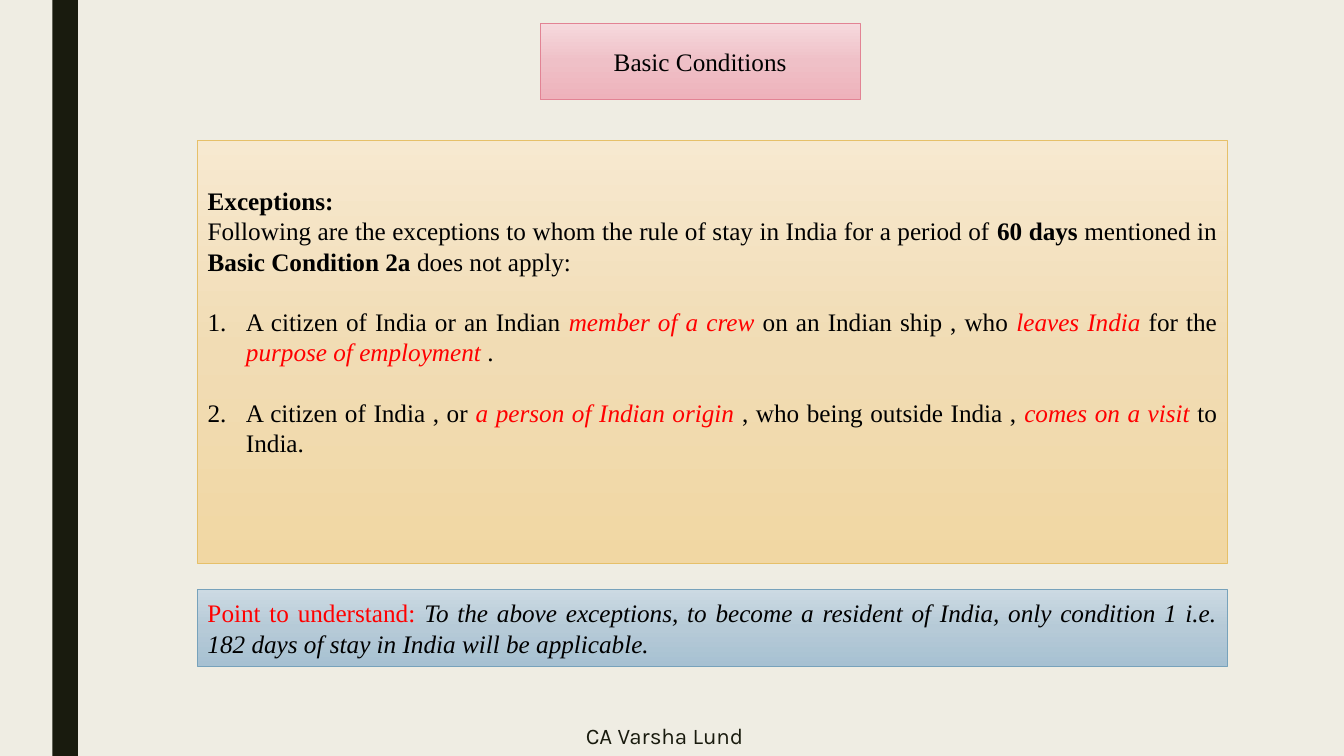
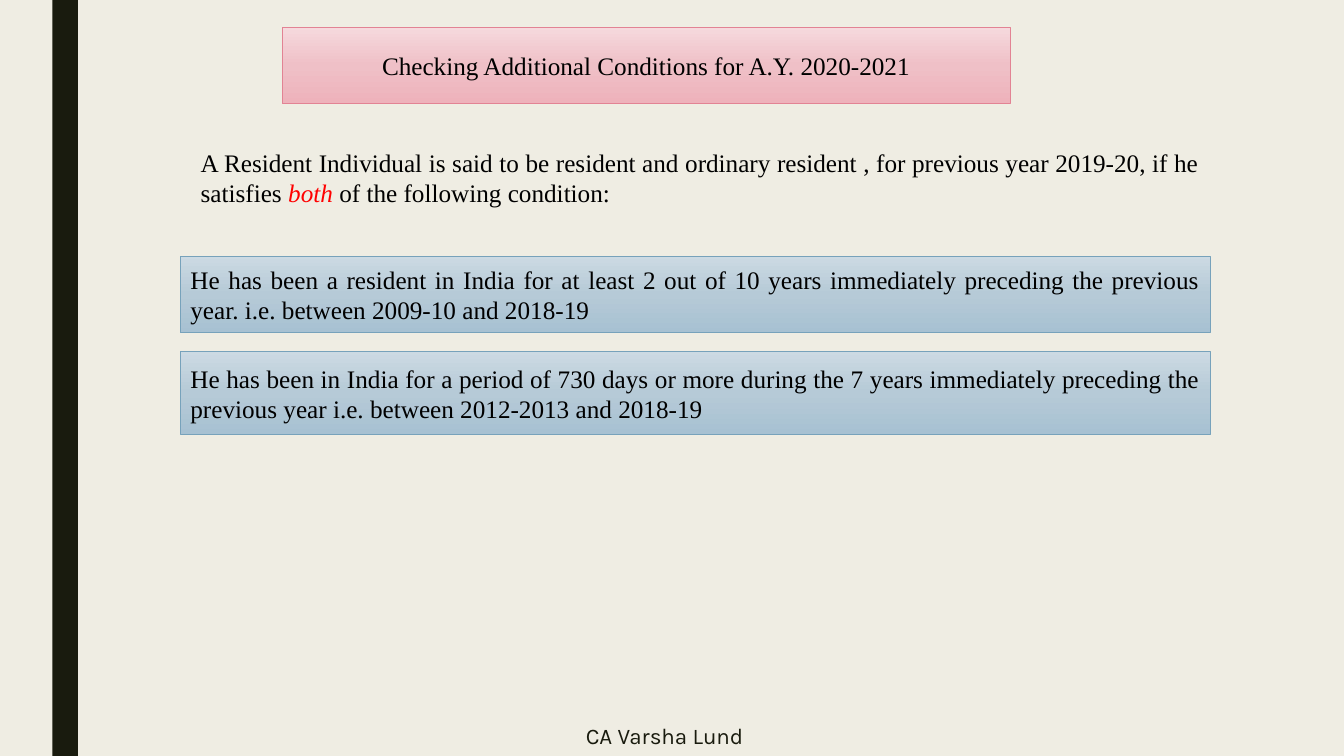
import copy

import lxml.etree
import pptx
import pptx.dml.color
import pptx.enum.shapes
import pptx.enum.text
import pptx.oxml.ns
import pptx.util

# Shared look
SERIF, SANS = "Times New Roman", "Karla"
PAPER, INK, BLACK, RED = "EFEDE3", "191B0E", "000000", "FF0000"
PINK = ("F6D9DD", "EFC0C7", "EEB2BB", "E28394")  # three gradient stops, outline
SAND = ("F7E9D0", "F1DCB4", "F1D7A3", "E6C069")
BLUE = ("CCDAE3", "B6CAD7", "A7C1D2", "77A2BB")
STYLES = {  # colour, bold, italic
    "plain": (BLACK, False, False),
    "bold": (BLACK, True, False),
    "italic": (BLACK, False, True),
    "red": (RED, False, False),
    "stress": (RED, False, True),
    "footer": (INK, False, False),
}
CENTER = pptx.enum.text.PP_ALIGN.CENTER
JUSTIFY = pptx.enum.text.PP_ALIGN.JUSTIFY
MIDDLE = pptx.enum.text.MSO_ANCHOR.MIDDLE
TOP = pptx.enum.text.MSO_ANCHOR.TOP
RECTANGLE = pptx.enum.shapes.MSO_SHAPE.RECTANGLE
LINE = pptx.util.Pt(21.6)
INDENT = pptx.util.Inches(0.38)

# Boxes: left, top, width, height in percent of the slide
BAND = (3.9, 0, 1.9, 100)
FOOTER = (23.7, 94.13, 51.5, 5.87)
PANEL_WIDTH, ROW = 76.6, 10.13


def color(value):
    return pptx.dml.color.RGBColor.from_string(value)


def dress(box, place, paragraphs, palette=None, align=JUSTIFY, anchor=MIDDLE,
          font=SERIF, size=18):
    """Place a box, fill it and write its paragraphs of (text, style) spans."""
    left, top, width, height = place
    box.left, box.width = (int(deck.slide_width * share / 100) for share in (left, width))
    box.top, box.height = (int(deck.slide_height * share / 100) for share in (top, height))
    if palette:
        box.fill.gradient()
        box.fill.gradient_angle = 270
        stop_list = box._element.spPr.find(".//" + pptx.oxml.ns.qn("a:gsLst"))
        stop_list.insert(1, copy.deepcopy(stop_list[0]))
        for number, stop in enumerate(box.fill.gradient_stops):
            stop.position = number / 2
            stop.color.rgb = color(palette[number])
        box.line.color.rgb = color(palette[3])
        box.line.width = pptx.util.Pt(0.5)
    frame = box.text_frame
    frame.word_wrap = True
    frame.auto_size = pptx.enum.text.MSO_AUTO_SIZE.NONE
    frame.vertical_anchor = anchor
    for number, (bullet, spans) in enumerate(paragraphs):
        para = frame.add_paragraph() if number else frame.paragraphs[0]
        para.alignment = align
        para.line_spacing = LINE
        para.space_before = LINE if bullet else pptx.util.Pt(0)
        props = para._p.get_or_add_pPr()
        props.set("marL", str(INDENT if bullet else 0))
        props.set("indent", str(-INDENT if bullet else 0))
        mark = lxml.etree.SubElement(
            props, pptx.oxml.ns.qn("a:buAutoNum" if bullet else "a:buNone"))
        if bullet:
            mark.set("type", "arabicPeriod")
        para.font.name = font
        para.font.size = pptx.util.Pt(size)
        for text, style in spans:
            span = para.add_run()
            span.text = text
            shade, span.font.bold, span.font.italic = STYLES[style]
            span.font.color.rgb = color(shade)


# Content: title, body placeholder and blue notes of each slide
slides = [
    {
        "title": "Basic Conditions",
        "title_place": (40.2, 3.07, 23.8, ROW),
        "body_place": (14.7, 18.53, PANEL_WIDTH, 56),
        "body_palette": SAND,
        "body_anchor": MIDDLE,
        "body_bottom": 2 * LINE,
        "body": [
            (False, [("Exceptions:", "bold")]),
            (False, [
                ("Following are the exceptions to whom the rule of stay in India "
                 "for a period of ", "plain"),
                ("60 days ", "bold"), ("mentioned in ", "plain"),
                ("Basic Condition 2a ", "bold"), ("does not apply:", "plain")]),
            (True, [
                ("A citizen of India or an Indian ", "plain"),
                ("member of a crew ", "stress"),
                ("on an Indian ship , who ", "plain"), ("leaves India ", "stress"),
                ("for the ", "plain"), ("purpose of employment ", "stress"),
                (".", "plain")]),
            (True, [
                ("A citizen of India , or ", "plain"),
                ("a person of Indian origin ", "stress"),
                (", who being outside India , ", "plain"),
                ("comes on a visit ", "stress"), ("to India.", "plain")]),
        ],
        "notes": [
            ((14.7, 78, PANEL_WIDTH, ROW), [
                ("Point to understand: ", "red"),
                ("To the above exceptions, to become a resident of India, only "
                 "condition 1 i.e. 182 days of stay in India will be applicable.",
                 "italic")]),
        ],
    },
    {
        "title": "Checking Additional Conditions for A.Y. 2020-2021",
        "title_place": (21, 3.6, 54.15, ROW),
        "body_place": (14.18, 18.8, 75.8, 9.47),
        "body_palette": None,
        "body_anchor": TOP,
        "body_bottom": 0,
        "body": [
            (False, [
                ("A Resident Individual is said to be resident and ordinary resident , "
                 "for previous year 2019-20, if he satisfies ", "plain"),
                ("both ", "stress"), ("of the following condition:", "plain")]),
        ],
        "notes": [
            ((13.43, 33.87, PANEL_WIDTH, ROW), [
                ("He has been a resident in India for at least 2 out of 10 years "
                 "immediately preceding the previous year. i.e. between 2009-10 "
                 "and 2018-19", "plain")]),
            ((13.43, 46.53, PANEL_WIDTH, 10.93), [
                ("He has been in India for a period of 730 days or more during the "
                 "7 years immediately preceding the previous year i.e. between "
                 "2012-2013 and 2018-19", "plain")]),
        ],
    },
]

# Deck and master background
deck = pptx.Presentation()
deck.slide_width = pptx.util.Inches(13.33)
deck.slide_height = pptx.util.Inches(7.5)
master = deck.slide_master
master.background.fill.solid()
master.background.fill.fore_color.rgb = color(PAPER)

for number, content in enumerate(slides):
    page = deck.slides.add_slide(deck.slide_layouts[1])

    # Dark side band, moved to the master so that every slide shows it
    if number == 0:
        band = page.shapes.add_shape(RECTANGLE, 0, 0, 0, 0)
        band.shadow.inherit = False
        dress(band, BAND, [])
        band.fill.solid()
        band.fill.fore_color.rgb = color(INK)
        band.line.fill.background()
        master.shapes[0]._element.addprevious(band._element)

    # Title and body placeholders
    title, body = page.placeholders
    dress(title, content["title_place"], [(False, [(content["title"], "plain")])],
          PINK, CENTER)
    dress(body, content["body_place"], content["body"], content["body_palette"],
          anchor=content["body_anchor"])
    body.text_frame.margin_bottom = pptx.util.Inches(0.05) + content["body_bottom"]

    # Blue notes
    for place, spans in content["notes"]:
        note = page.shapes.add_shape(RECTANGLE, 0, 0, 0, 0)
        note.shadow.inherit = False
        dress(note, place, [(False, spans)], BLUE)

    # Footer
    footer = page.shapes.add_textbox(0, 0, 0, 0)
    dress(footer, FOOTER, [(False, [("CA Varsha Lund", "footer")])],
          align=CENTER, font=SANS, size=16)

deck.save("out.pptx")
